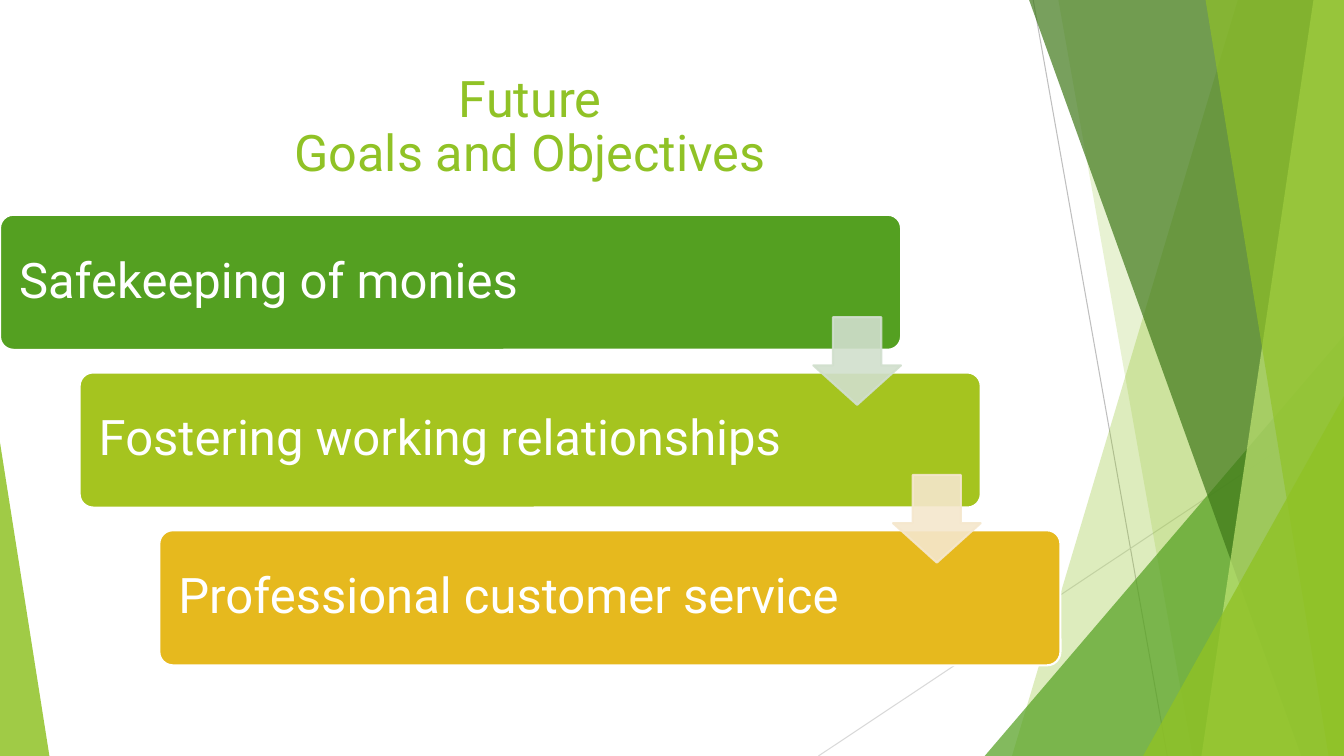
from lxml.etree import SubElement
from pptx import Presentation
from pptx.dml.color import RGBColor
from pptx.enum.shapes import MSO_CONNECTOR as Conn, MSO_SHAPE as Kind
from pptx.enum.text import MSO_ANCHOR as Anchor, PP_ALIGN as Align
from pptx.oxml.ns import qn
from pptx.util import Pt

LINES = [
    ((738, 0), (833.8, 540), "BFBFBF"),
    ((960, 290.2), (584.6, 540), "D9D9D9"),
]
BANDS = [
    (884.2, 722.9, "90C226", 30),
    (756, 851.8, "90C226", 20),
    (735.1, 929.5, "3F7819", 70),
    (938.2, 858.2, "C0E474", 70),
    (861.1, 949, "90C226", 65),
]
WEDGES = [
    (703.4, 239.8, 256.6, 1, "54A021", 72),
    (816.5, 283, 143.5, 1, "90C226", 80),
    (0, 316.1, 35.3, 0, "90C226", 85),
]
GOALS = [
    ("Safekeeping of monies", "54A021"),
    ("Fostering working relationships", "A5C41F"),
    ("Professional customer service", "E6B91E"),
]
ARROWS = ["D1DFCD", "F5E7CD"]
STEP_X, STEP_Y = 56.9, 112.7


def color(code):
    return RGBColor.from_string(code)


def paint(shape, fill, edge=None, solid=100):
    shape.shadow.inherit = False
    shape.fill.solid()
    shape.fill.fore_color.rgb = color(fill)
    if edge:
        shape.line.color.rgb = color(edge)
        shape.line.width = Pt(1.5)
    else:
        shape.line.fill.background()
    if solid < 100:
        for node in list(shape._element.spPr.iter(qn("a:srgbClr"))):
            SubElement(node, qn("a:alpha"), val=str(solid * 1000))


def write(shape, text, size, ink, align=Align.LEFT, inset=7.2):
    frame = shape.text_frame
    frame.word_wrap = True
    frame.vertical_anchor = Anchor.MIDDLE
    frame.margin_left = frame.margin_right = Pt(inset)
    frame.margin_top = frame.margin_bottom = Pt(min(inset, 10.8) if inset > 7.2 else 3.6)
    para = frame.paragraphs[0]
    para.alignment = align
    para.line_spacing = 0.9
    for i, part in enumerate(text.split("\n")):
        if i:
            para.add_line_break()
        run = para.add_run()
        run.text = part
        run.font.size = Pt(size)
        run.font.name = "Roboto"
        run.font.color.rgb = color(ink)


def add_line(slide, start, end, ink):
    line = slide.shapes.add_connector(Conn.STRAIGHT, *map(Pt, start + end))
    line.line.color.rgb = color(ink)
    line.line.width = Pt(0.75)
    SubElement(line._element.spPr, qn("a:effectLst"))


def add_band(slide, top, base, fill, solid):
    pen = slide.shapes.build_freeform(Pt(top), 0)
    corners = [(960, 0), (960, 540), (base, 540)]
    pen.add_line_segments([(Pt(x), Pt(y)) for x, y in corners])
    paint(pen.convert_to_shape(), fill, solid=solid)


def add_form(slide, kind, box, adjust):
    shape = slide.shapes.add_shape(kind, *map(Pt, box))
    for i, value in enumerate(adjust):
        shape.adjustments[i] = value
    return shape


def add_title(slide, text):
    title = slide.shapes.title
    title.left, title.top, title.width, title.height = map(Pt, (0, 48.2, 757.4, 86.4))
    write(title, text, 36, "90C226", align=Align.CENTER)


def add_goal(slide, i, text, fill):
    box = (STEP_X * i, 153.4 + STEP_Y * i, 643.7, 96.5)
    goal = add_form(slide, Kind.ROUNDED_RECTANGLE, box, [0.1])
    paint(goal, fill, "FFFFFF")
    write(goal, text, 35, "FFFFFF", inset=10.8)


def add_arrow(slide, i, fill):
    box = (581 + STEP_X * i, 226.6 + STEP_Y * i, 62.6, 62.6)
    arrow = add_form(slide, Kind.DOWN_ARROW, box, [0.55, 0.45])
    paint(arrow, fill, fill, 90)


def main():
    deck = Presentation()
    deck.slide_width, deck.slide_height = Pt(960), Pt(540)
    slide = deck.slides.add_slide(deck.slide_layouts[5])
    for start, end, ink in LINES:
        add_line(slide, start, end, ink)
    for i, band in enumerate(BANDS):
        if i == 2:
            add_wedge(slide, *WEDGES[0])
        add_band(slide, *band)
    for wedge in WEDGES[1:]:
        add_wedge(slide, *wedge)
    add_title(slide, "Future\nGoals and Objectives")
    for i, (text, fill) in enumerate(GOALS):
        add_goal(slide, i, text, fill)
    for i, fill in enumerate(ARROWS):
        add_arrow(slide, i, fill)
    deck.save("out.pptx")


def add_wedge(slide, left, top, width, tip, fill, solid):
    box = (left, top, width, 540 - top)
    paint(add_form(slide, Kind.ISOSCELES_TRIANGLE, box, [tip]), fill, solid=solid)


if __name__ == "__main__":
    main()
